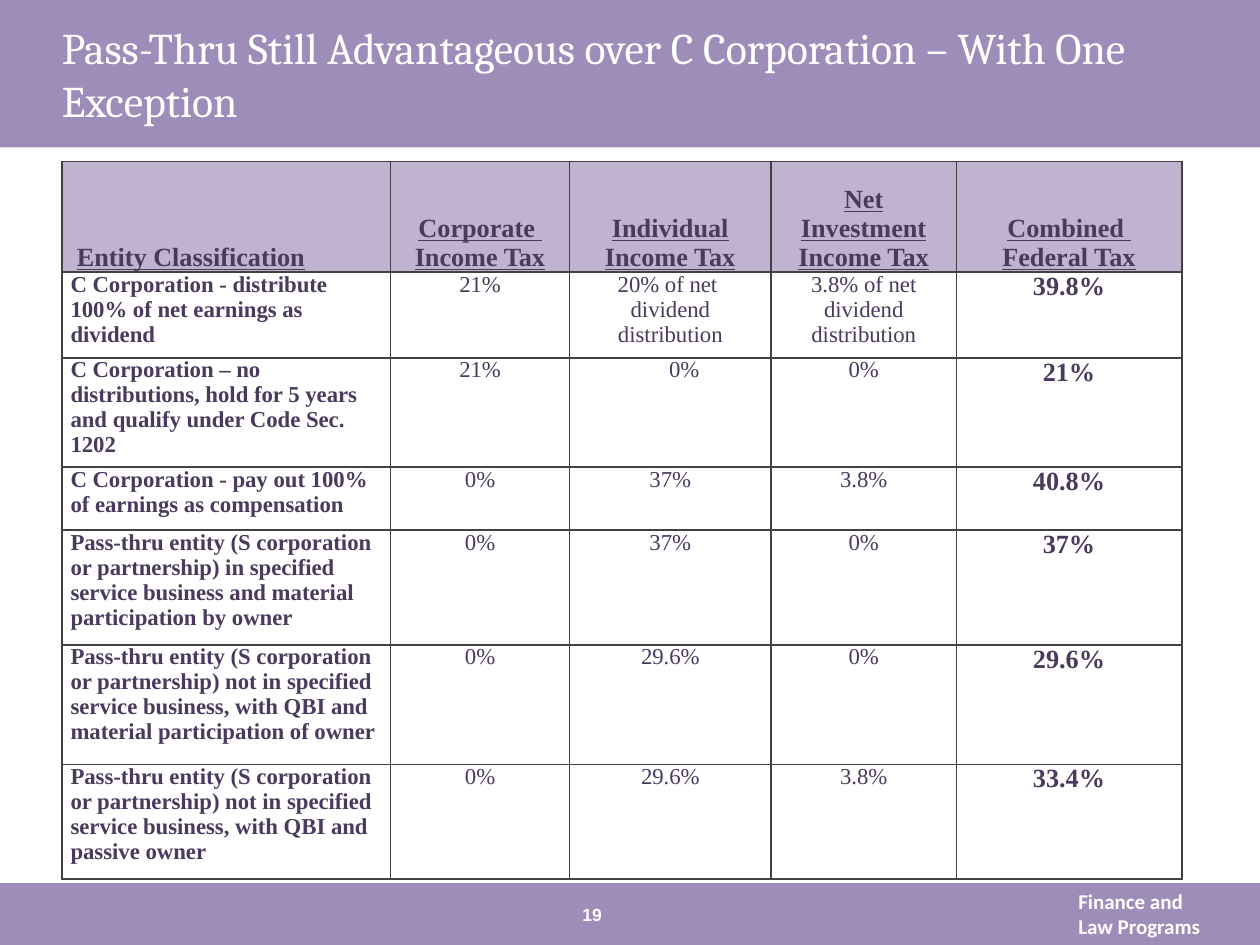
from lxml import etree
from pptx import Presentation
from pptx.dml.color import RGBColor
from pptx.enum.shapes import MSO_SHAPE
from pptx.enum.text import MSO_ANCHOR as Anchor, PP_ALIGN as Align
from pptx.oxml.ns import qn
from pptx.util import Inches, Pt

COLORS = {"band": "9F8DB9", "header": "BFB3D0", "ink": "493A5E",
          "border": "414042", "white": "FFFFFF"}

COLUMN_WIDTHS = [2.61, 1.42, 1.6, 1.47, 1.79]
ROW_HEIGHTS = [0.88, 0.68, 0.79, 0.5, 0.91, 0.95, 0.91]
# "\v" is a line break inside a paragraph
ROWS = [
    ["Entity Classification", "Corporate \vIncome Tax", "Individual Income Tax",
     "Net Investment Income Tax", "Combined \vFederal Tax"],
    ["C Corporation - distribute 100% of net earnings as dividend",
     "21%", "20% of net \vdividend distribution",
     "3.8% of net dividend distribution", "39.8%"],
    ["C Corporation – no distributions, hold for 5 years and qualify under "
     "Code Sec. 1202", "21%", "0%", "0%", "21%"],
    ["C Corporation - pay out 100% of earnings as compensation",
     "0%", "37%", "3.8%", "40.8%"],
    ["Pass-thru entity (S corporation or partnership) in specified service "
     "business and material participation by owner", "0%", "37%", "0%", "37%"],
    ["Pass-thru entity (S corporation or partnership) not in specified service "
     "business, with QBI and material participation of owner",
     "0%", "29.6%", "0%", "29.6%"],
    ["Pass-thru entity (S corporation or partnership) not in specified service "
     "business, with QBI and passive owner", "0%", "29.6%", "3.8%", "33.4%"],
]
# Cells whose left margin differs from the usual one
LEFT_MARGINS = {(0, 0): 0.12, (2, 2): 0.29}


def rgb(name):
    return RGBColor.from_string(COLORS[name])


def style_text(frame, font, size, color, bold=False, underline=False,
               align=Align.LEFT):
    for para in frame.paragraphs:
        para.alignment = align
        for span in para.runs:
            span.font.name = font
            span.font.size = Pt(size)
            span.font.bold = bold
            span.font.underline = underline
            span.font.color.rgb = rgb(color)


def add_band(page, left, top, width, height):
    band = page.shapes.add_shape(MSO_SHAPE.RECTANGLE, Inches(left), Inches(top),
                                 Inches(width), Inches(height))
    band.shadow.inherit = False
    band.fill.solid()
    band.fill.fore_color.rgb = rgb("band")
    band.line.fill.background()


def add_label(page, box, text, font, size, bold=False, align=Align.LEFT,
              anchor=Anchor.MIDDLE, inset=0):
    label = page.shapes.add_textbox(*(Inches(value) for value in box))
    frame = label.text_frame
    frame.word_wrap = True
    frame.vertical_anchor = anchor
    frame.margin_left = frame.margin_right = Inches(inset)
    frame.margin_top = frame.margin_bottom = Inches(inset / 2)
    frame.text = text
    style_text(frame, font, size, "white", bold, align=align)


def add_header(page, left, top, width, height):
    add_band(page, left, top, width, height)
    add_label(page, (left + 0.49, top, 9.09, height),
              "Pass-Thru Still Advantageous over C Corporation – With One Exception",
              "Cambria", 25)


def add_footer(page, left, top, width, height):
    add_band(page, left, top, width, height)
    add_label(page, (left + 8.46, top - 0.01, 1.46, 0.5),
              "Finance and \vLaw Programs", "Calibri", 12, bold=True,
              anchor=Anchor.TOP, inset=0.1)
    add_label(page, (left + 4.2, top + 0.16, 1, 0.17), "19", "Arial", 10,
              bold=True, align=Align.CENTER)


def set_borders(cell):
    properties = cell._tc.get_or_add_tcPr()
    for index, side in enumerate(("lnL", "lnR", "lnT", "lnB")):
        line = etree.Element(qn(f"a:{side}"), w=str(Pt(1)))
        fill = etree.SubElement(line, qn("a:solidFill"))
        etree.SubElement(fill, qn("a:srgbClr"), val=COLORS["border"])
        properties.insert(index, line)


def format_cell(cell, row, column):
    is_header = row == 0
    is_first, is_last = column == 0, column == len(COLUMN_WIDTHS) - 1
    cell.margin_left = Inches(LEFT_MARGINS.get((row, column), 0.07))
    cell.margin_right = Inches(0.07)
    cell.margin_top = cell.margin_bottom = 0
    cell.vertical_anchor = Anchor.BOTTOM if is_header else Anchor.TOP
    if is_header:
        cell.fill.solid()
        cell.fill.fore_color.rgb = rgb("header")
    else:
        cell.fill.background()
    style_text(cell.text_frame, "Times New Roman",
               15 if is_header or is_last else 13, "ink",
               bold=is_header or is_first or is_last, underline=is_header,
               align=Align.LEFT if is_first else Align.CENTER)
    set_borders(cell)


def add_tax_table(page, left, top):
    frame = page.shapes.add_table(
        len(ROWS), len(COLUMN_WIDTHS), Inches(left), Inches(top),
        Inches(sum(COLUMN_WIDTHS)), Inches(sum(ROW_HEIGHTS)))
    table = frame.table
    table.first_row = table.horz_banding = False
    for column, width in zip(table.columns, COLUMN_WIDTHS):
        column.width = Inches(width)
    for row, height in zip(table.rows, ROW_HEIGHTS):
        row.height = Inches(height)
    for row, texts in enumerate(ROWS):
        for column, text in enumerate(texts):
            cell = table.cell(row, column)
            cell.text_frame.text = text
            format_cell(cell, row, column)


def main():
    deck = Presentation()
    deck.slide_width, deck.slide_height = Inches(10), Inches(7.5)
    page = deck.slides.add_slide(deck.slide_layouts[6])
    add_header(page, 0, 0, 10, 1.17)
    add_footer(page, 0, 7.01, 10, 0.49)
    add_tax_table(page, 0.49, 1.28)
    deck.save("out.pptx")


if __name__ == "__main__":
    main()
